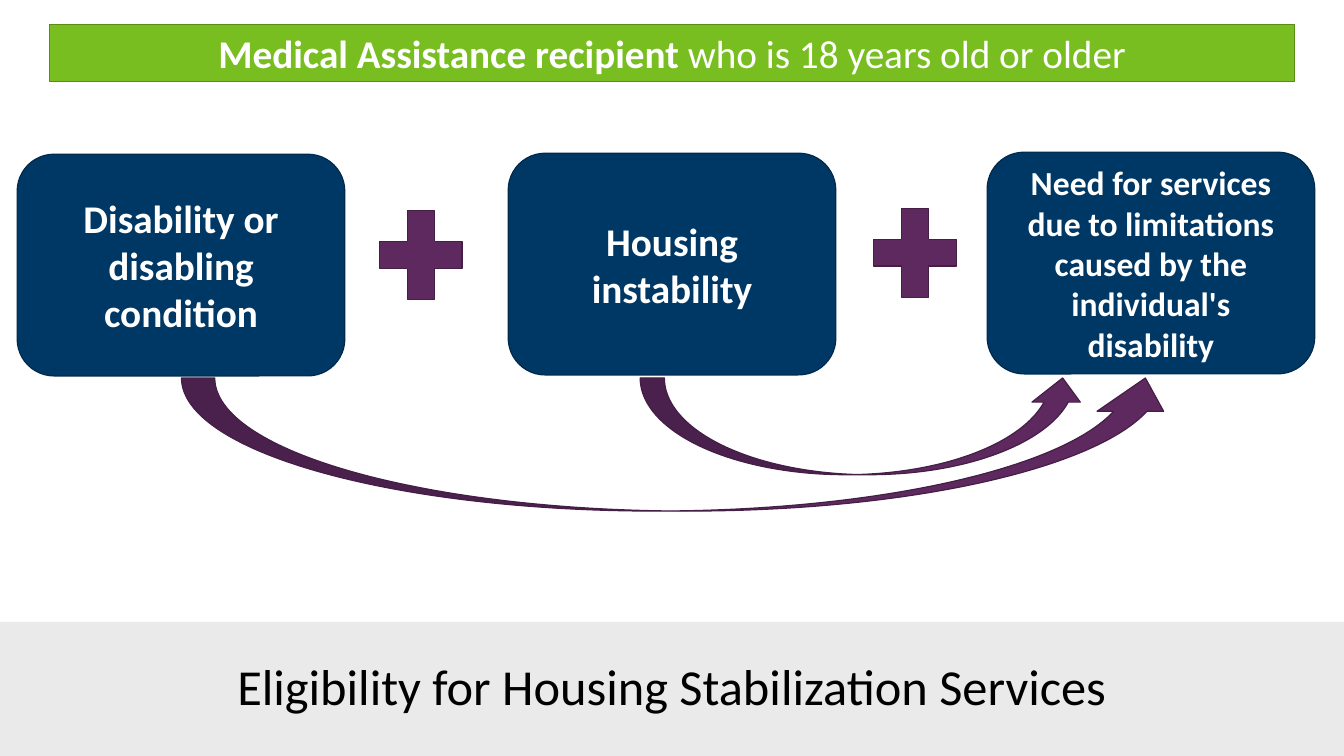
"""Build the Housing Stabilization Services eligibility slide."""
import dataclasses

import pptx
import pptx.dml.color
import pptx.enum.shapes
import pptx.enum.text
import pptx.oxml
import pptx.oxml.ns
import pptx.util

EMU_PER_PX = 9144
SHAPE = pptx.enum.shapes.MSO_SHAPE
MIDDLE = pptx.enum.text.MSO_ANCHOR.MIDDLE


@dataclasses.dataclass(frozen=True)
class Theme:
    """Colours and type sizes of the slide."""
    font: str = "Calibri"
    navy: str = "003865"
    navy_line: str = "00294B"
    purple: str = "5D295F"
    purple_line: str = "451E46"
    green: str = "78BE21"
    green_line: str = "598D18"
    band: str = "E8E8E8"
    white: str = "FFFFFF"
    black: str = "000000"
    title_size: int = 36
    text_size: int = 28
    small_size: int = 24
    line_width: float = 0.85


THEME = Theme()


def px(n):
    """Turn px into EMU."""
    return pptx.util.Emu(n * EMU_PER_PX)


def rgb(colour):
    """Turn a hex string into a colour."""
    return pptx.dml.color.RGBColor.from_string(colour)


def add_shape(s, kind, box, fill, line=None):
    """Add a flat preset shape at box, given as left, top, width, height."""
    sp = s.shapes.add_shape(kind, *map(px, box))
    sp.shadow.inherit = False
    sp.fill.solid()
    sp.fill.fore_color.rgb = rgb(fill)
    if line:
        sp.line.color.rgb = rgb(line)
        sp.line.width = pptx.util.Pt(THEME.line_width)
    else:
        sp.line.fill.background()
    return sp


def write(sp, runs, size, colour):
    """Write centred (text, bold) runs into a shape."""
    tf = sp.text_frame
    tf.word_wrap = True
    tf.vertical_anchor = MIDDLE
    p = tf.paragraphs[0]
    p.alignment = pptx.enum.text.PP_ALIGN.CENTER
    for text, bold in runs:
        r = p.add_run()
        r.text = text
        r.font.name = THEME.font
        r.font.size = pptx.util.Pt(size)
        r.font.bold = bold
        r.font.color.rgb = rgb(colour)
    return p


def add_card(s, left, top, text, size):
    """Add a rounded criterion card."""
    sp = add_shape(s, SHAPE.ROUNDED_RECTANGLE, (left, top, 325, 220),
                   THEME.navy, THEME.navy_line)
    write(sp, [(text, True)], size, THEME.white)


def add_symbol(s, kind, box):
    """Add a purple plus sign or curved arrow."""
    add_shape(s, kind, box, THEME.purple, THEME.purple_line)


def add_title(s, text):
    """Add the translucent footer band with the title on it."""
    band = add_shape(s, SHAPE.RECTANGLE, (0, 617, 1333, 133), THEME.band)
    colour = band.element.find(".//" + pptx.oxml.ns.qn("a:srgbClr"))
    alpha = pptx.oxml.parse_xml(
        f'<a:alpha {pptx.oxml.ns.nsdecls("a")} val="88000"/>')
    colour.append(alpha)
    title = s.shapes.title
    title.left, title.top, title.width, title.height = map(
        px, (29, 617, 1275, 133))
    title.text_frame.auto_size = pptx.enum.text.MSO_AUTO_SIZE.NONE
    p = write(title, [(text, False)], THEME.title_size, THEME.black)
    p.line_spacing = 0.9
    band.element.addnext(title.element)


def add_banner(s, runs):
    """Add the green banner across the top."""
    sp = add_shape(s, SHAPE.RECTANGLE, (49, 24, 1235, 57),
                   THEME.green, THEME.green_line)
    write(sp, runs, THEME.text_size, THEME.white)


def main():
    """Build and save the slide."""
    prs = pptx.Presentation()
    prs.slide_width, prs.slide_height = px(1333), px(750)
    s = prs.slides.add_slide(prs.slide_layouts[5])
    add_title(s, "Eligibility for Housing Stabilization Services")
    add_card(s, 17, 153, "Disability or disabling condition", THEME.text_size)
    add_card(s, 504, 152, "Housing instability", THEME.text_size)
    add_card(s, 979, 151, "Need for services due to limitations caused by "
             "the individual's disability", THEME.small_size)
    for left, top in ((362, 193), (852, 191)):
        add_symbol(s, SHAPE.MATH_PLUS, (left, top, 111, 120))
    for left, width, height in ((180, 989, 132), (635, 443, 96)):
        add_symbol(s, SHAPE.CURVED_UP_ARROW, (left, 375, width, height))
    add_banner(s, [("Medical Assistance recipient ", True),
                   ("who is 18 years old or older", False)])
    prs.save("out.pptx")


if __name__ == "__main__":
    main()
